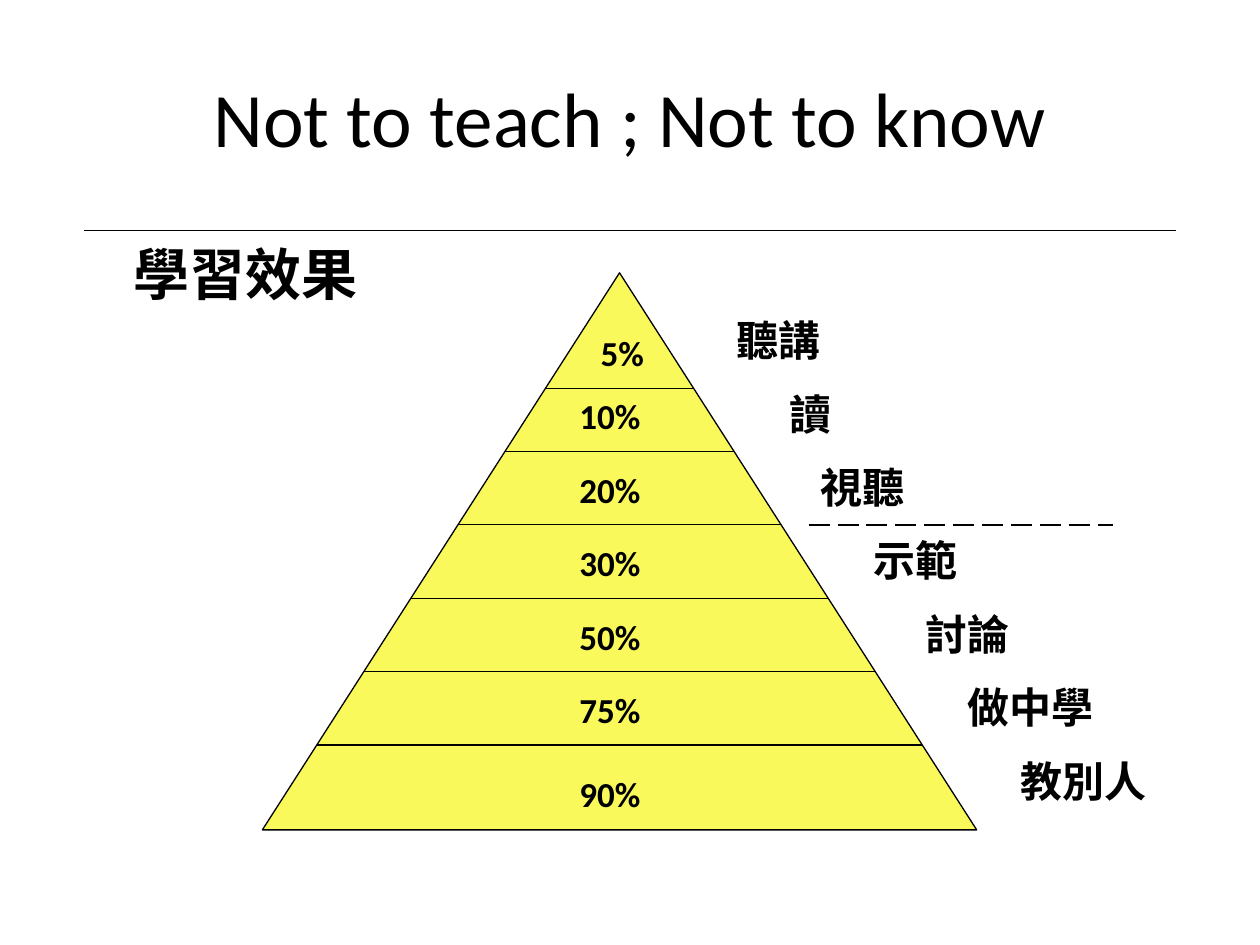
from pptx import Presentation
from pptx.dml.color import RGBColor
from pptx.enum.dml import MSO_LINE_DASH_STYLE as Dash
from pptx.enum.shapes import MSO_CONNECTOR_TYPE as Connector, MSO_SHAPE as Shape
from pptx.enum.text import MSO_ANCHOR as Anchor, MSO_AUTO_SIZE as AutoSize, PP_ALIGN as Align
from pptx.oxml.ns import qn
from pptx.util import Cm, Pt

# All lengths are in centimetres.
TITLE = "Not to teach ; Not to know"
HEADING = "學習效果"
FONT, BLACK, YELLOW = "Calibri", "000000", "FAF95C"

# share retained, left and top of the share, activity, left of the activity
LEVELS = [
    ("5%", 11.86, 6.56, "聽講", 14.6),
    ("10%", 11.43, 7.83, "讀", 15.67),
    ("20%", 11.43, 9.31, "視聽", 16.3),
    ("30%", 11.43, 10.79, "示範", 17.36),
    ("50%", 11.43, 12.28, "討論", 18.41),
    ("75%", 11.43, 13.76, "做中學", 19.26),
    ("90%", 11.43, 15.45, "教別人", 20.32),
]
PYRAMID = (5.29, 5.5, 14.4, 11.23)
STEP = 1.48
DIVIDERS = [7.83] + [9.1 + STEP * row for row in range(5)]
ACTIVITY_TOP = 6.22


def color(value):
    return RGBColor.from_string(value)


def write(frame, text, size, bold=False):
    para = frame.paragraphs[0]
    span = para.add_run()
    span.text = text
    look = {"name": FONT, "size": Pt(size), "bold": bold}
    for name, value in look.items():
        setattr(span.font, name, value)
    span.font.color.rgb = color(BLACK)
    return para


def add_label(slide, text, left, top, width, height, size):
    box = slide.shapes.add_textbox(Cm(left), Cm(top), Cm(width), Cm(height))
    box.text_frame.word_wrap = False
    box.text_frame.auto_size = AutoSize.SHAPE_TO_FIT_TEXT
    write(box.text_frame, text, size, bold=True)


def add_rule(slide, start, end, y, width=0.75, dash=None):
    """Draw a horizontal line without the theme shadow."""
    rule = slide.shapes.add_connector(Connector.STRAIGHT, Cm(start), Cm(y), Cm(end), Cm(y))
    rule.line.color.rgb = color(BLACK)
    rule.line.width = Pt(width)
    if dash:
        rule.line.dash_style = dash
    properties = rule._element.spPr
    properties.append(properties.makeelement(qn("a:effectLst"), {}))


def add_pyramid(slide):
    left, top, width, height = PYRAMID
    pyramid = slide.shapes.add_shape(Shape.ISOSCELES_TRIANGLE, *map(Cm, PYRAMID))
    pyramid.shadow.inherit = False
    pyramid.fill.solid()
    pyramid.fill.fore_color.rgb = color(YELLOW)
    pyramid.line.color.rgb = color(BLACK)
    pyramid.line.width = Pt(0.75)
    center = left + width / 2
    for y in DIVIDERS:
        half = width / 2 * (y - top) / height
        add_rule(slide, center - half, center + half, y)


def main():
    deck = Presentation()
    deck.slide_width, deck.slide_height = Cm(25.4), Cm(19.05)
    slide = deck.slides.add_slide(deck.slide_layouts[5])

    title = slide.shapes.title
    place = {"left": 1.27, "top": 0.76, "width": 22.86, "height": 3.18}
    for name, value in place.items():
        setattr(title, name, Cm(value))
    title.text_frame.vertical_anchor = Anchor.MIDDLE
    write(title.text_frame, TITLE, 44).alignment = Align.CENTER

    add_rule(slide, 1.7, 23.7, 4.65)
    add_label(slide, HEADING, 2.44, 4.7, 5.03, 1.6, 32)
    add_pyramid(slide)
    add_rule(slide, 16.3, 22.43, DIVIDERS[2], 1.5, Dash.LONG_DASH)

    for row, (share, share_left, share_top, activity, activity_left) in enumerate(LEVELS):
        share_width = 0.68 + 0.36 * len(share)
        add_label(slide, share, share_left, share_top, share_width, 1.11, 20)
        activity_width = 0.5 + 0.85 * len(activity)
        activity_top = ACTIVITY_TOP + STEP * row
        add_label(slide, activity, activity_left, activity_top, activity_width, 1.28, 24)

    deck.save("out.pptx")


if __name__ == "__main__":
    main()
